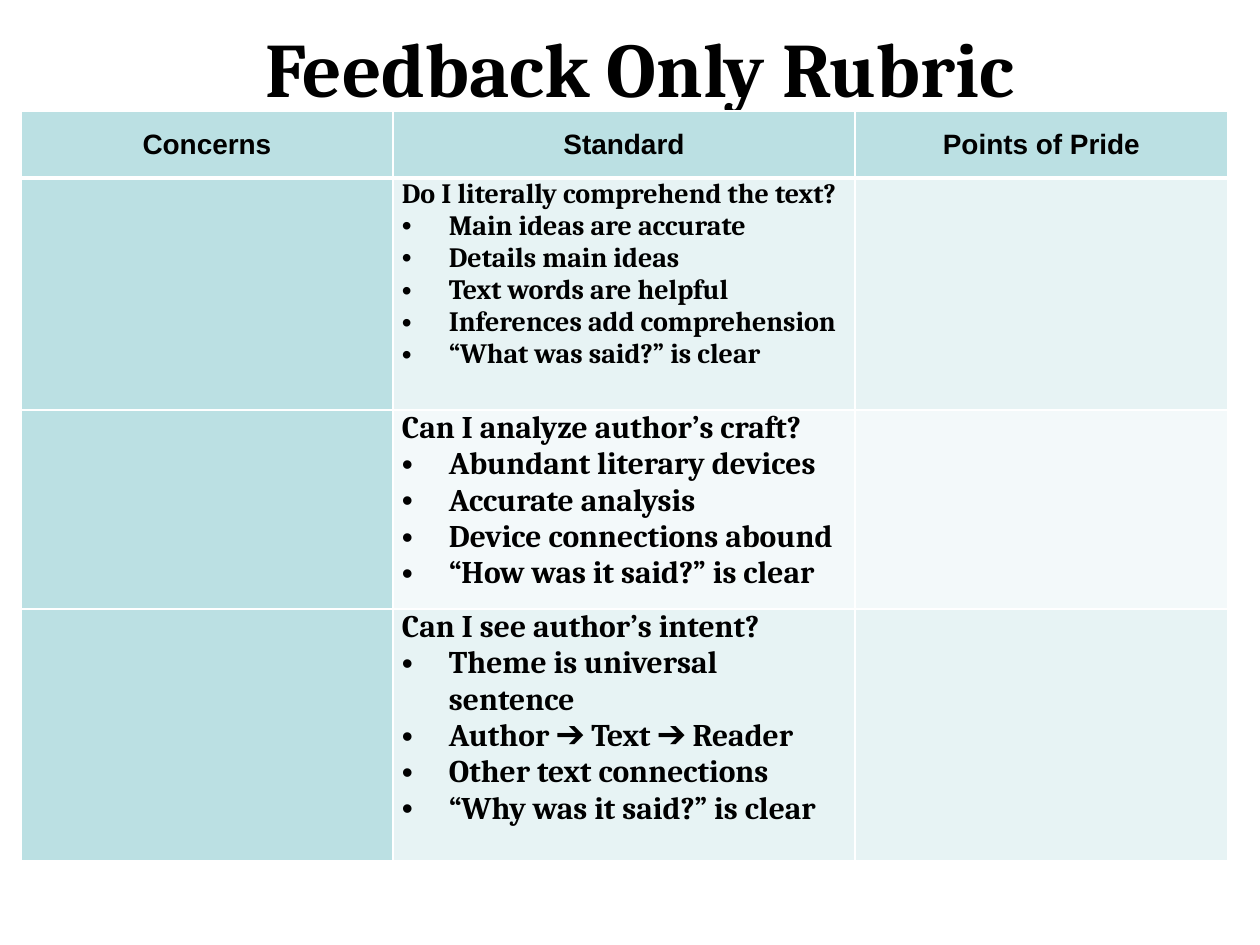
from dataclasses import dataclass

from lxml.etree import SubElement
from pptx import Presentation
from pptx.dml.color import RGBColor
from pptx.enum.text import MSO_ANCHOR as Anchor, PP_ALIGN as Align
from pptx.oxml.ns import qn
from pptx.util import Emu, Pt

BLACK = RGBColor(0x00, 0x00, 0x00)
WHITE = RGBColor(0xFF, 0xFF, 0xFF)
TEAL = RGBColor(0xBB, 0xE0, 0xE3)
PALE = RGBColor(0xE7, 0xF3, 0xF4)
PALEST = RGBColor(0xF3, 0xF9, 0xFA)

HEADINGS = ("Concerns", "Standard", "Points of Pride")
COLUMN_WIDTHS = (372, 462, 373)
HEADER_HEIGHT = 67
CELL_INSET = 9
BULLET_INDENT = 47


@dataclass(frozen=True)
class Standard:
    question: str
    criteria: tuple[str, ...]
    size: int
    height: int
    band: RGBColor


STANDARDS = (
    Standard("Do I literally comprehend the text?",
             ("Main ideas are accurate", "Details main ideas",
              "Text words are helpful", "Inferences add comprehension",
              "“What was said?” is clear"), 16, 232, PALE),
    Standard("Can I analyze author’s craft?",
             ("Abundant literary devices", "Accurate analysis",
              "Device connections abound", "“How was it said?” is clear"),
             18, 199, PALEST),
    Standard("Can I see author’s intent?",
             ("Theme is universal sentence", "Author ➔ Text ➔ Reader",
              "Other text connections", "“Why was it said?” is clear"),
             18, 252, PALE),
)


def px(length: int) -> Emu:
    return Emu(round(length * 914400 / 126))


def style_text(paragraph, font_name: str, size: int) -> None:
    for run in paragraph.runs:
        run.font.name = font_name
        run.font.size = Pt(size)
        run.font.bold = True
        run.font.color.rgb = BLACK


def add_bullet(paragraph) -> None:
    properties = paragraph._p.get_or_add_pPr()
    properties.set("marL", str(px(BULLET_INDENT)))
    properties.set("indent", str(-px(BULLET_INDENT)))
    SubElement(properties, qn("a:buFont")).set("typeface", "Arial")
    SubElement(properties, qn("a:buChar")).set("char", "•")


def style_cell(cell, color: RGBColor, top: int = 1, bottom: int = 1) -> None:
    cell.margin_left = cell.margin_right = px(CELL_INSET)
    cell.margin_top = cell.margin_bottom = 0
    # Borders must come before the fill
    properties = cell._tc.get_or_add_tcPr()
    for side, width in (("L", 1), ("R", 1), ("T", top), ("B", bottom)):
        line = SubElement(properties, qn(f"a:ln{side}"), w=str(Pt(width)))
        fill = SubElement(line, qn("a:solidFill"))
        SubElement(fill, qn("a:srgbClr"), val=str(WHITE))
    cell.fill.solid()
    cell.fill.fore_color.rgb = color


def add_title(slide, title: str) -> None:
    box = slide.shapes.add_textbox(px(73), px(21), px(1134), px(91))
    frame = box.text_frame
    frame.word_wrap = True
    frame.vertical_anchor = Anchor.MIDDLE
    frame.text = title
    frame.paragraphs[0].alignment = Align.CENTER
    style_text(frame.paragraphs[0], "Cambria", 44)


def fill_heading(cell, heading: str) -> None:
    style_cell(cell, TEAL, bottom=3)
    cell.vertical_anchor = Anchor.MIDDLE
    cell.text_frame.text = heading
    paragraph = cell.text_frame.paragraphs[0]
    paragraph.alignment = Align.CENTER
    paragraph.space_after = Pt(7.2)
    style_text(paragraph, "Arial", 16)


def fill_standard(cell, standard: Standard) -> None:
    frame = cell.text_frame
    frame.text = "\n".join((standard.question, *standard.criteria))
    for paragraph in frame.paragraphs[1:]:
        add_bullet(paragraph)
    for paragraph in frame.paragraphs:
        style_text(paragraph, "Cambria", standard.size)


def add_rubric(slide) -> None:
    heights = (HEADER_HEIGHT, *(standard.height for standard in STANDARDS))
    rubric = slide.shapes.add_table(
        len(heights), len(HEADINGS), px(21), px(111),
        px(sum(COLUMN_WIDTHS)), px(sum(heights))).table
    rubric.horz_banding = False
    for column, width in zip(rubric.columns, COLUMN_WIDTHS):
        column.width = px(width)
    for row, height in zip(rubric.rows, heights):
        row.height = px(height)

    # Header row
    for index, heading in enumerate(HEADINGS):
        fill_heading(rubric.cell(0, index), heading)

    # One row per standard, with room for comments on both sides
    for index, standard in enumerate(STANDARDS, start=1):
        for column, color in enumerate((TEAL, standard.band, standard.band)):
            style_cell(rubric.cell(index, column), color,
                       top=3 if index == 1 else 1)
        fill_standard(rubric.cell(index, 1), standard)


def main() -> None:
    deck = Presentation()
    deck.slide_width, deck.slide_height = px(1260), px(945)
    slide = deck.slides.add_slide(deck.slide_layouts[6])
    add_title(slide, "Feedback Only Rubric")
    add_rubric(slide)
    deck.save("out.pptx")


if __name__ == "__main__":
    main()
